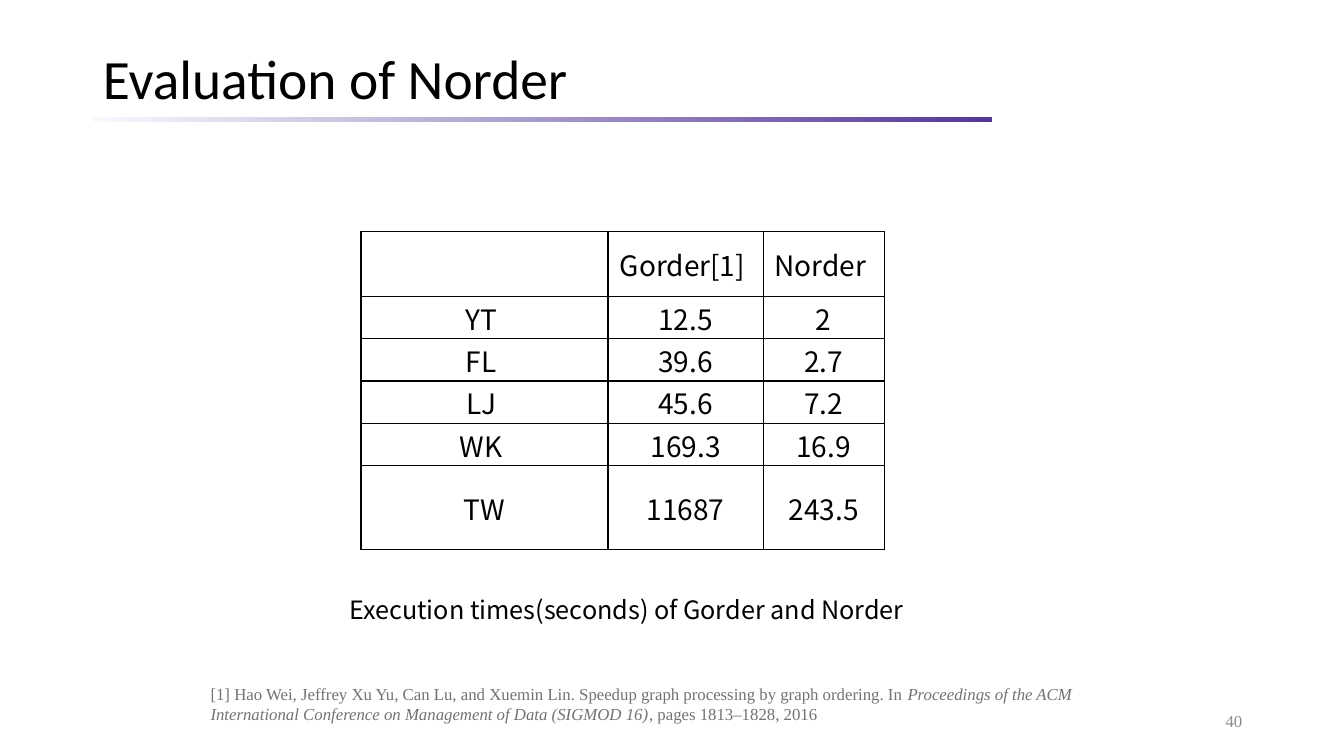
from dataclasses import dataclass

from lxml.etree import SubElement
from pptx import Presentation
from pptx.dml.color import RGBColor
from pptx.enum.shapes import MSO_SHAPE
from pptx.enum.text import MSO_ANCHOR, MSO_AUTO_SIZE, PP_ALIGN
from pptx.oxml.ns import qn
from pptx.util import Inches, Pt


@dataclass(frozen=True)
class Theme:
    black: str = "000000"
    white: str = "FFFFFF"
    gray: str = "767171"
    pale: str = "8C8C8C"
    fade: str = "F7FAFD"
    violet: str = "543795"
    head: str = "Calibri"
    sans: str = "Noto Sans CJK SC"
    serif: str = "Times New Roman"
    title: float = 39.6
    cell: float = 20
    label: float = 18
    note: float = 12


theme = Theme()


def write(frame, *parts, font=theme.sans, size=theme.cell, color=theme.black,
          align=PP_ALIGN.CENTER, anchor=MSO_ANCHOR.MIDDLE):
    """Fill the frame's first paragraph; every second part is italic."""
    frame.word_wrap = True
    frame.vertical_anchor = anchor
    para = frame.paragraphs[0]
    para.alignment = align
    for i, part in enumerate(parts):
        run = para.add_run()
        run.text = part
        run.font.name = font
        run.font.size = Pt(size)
        run.font.italic = i % 2 == 1
        run.font.color.rgb = RGBColor.from_string(color)
    return para


def outline(cell):
    props = cell._tc.get_or_add_tcPr()
    for side in ("lnL", "lnR", "lnT", "lnB"):
        line = SubElement(props, qn(f"a:{side}"), w=str(Pt(1)))
        fill = SubElement(line, qn("a:solidFill"))
        SubElement(fill, qn("a:srgbClr"), val=theme.black)


deck = Presentation()
deck.slide_width, deck.slide_height = Inches(13.33), Inches(7.5)
slide = deck.slides.add_slide(deck.slide_layouts[5])
shapes = slide.shapes

# Title and its rule
title = shapes.title
title.left, title.top = Inches(0.92), Inches(0.43)
title.width, title.height = Inches(11.5), Inches(0.75)
title.text_frame.auto_size = MSO_AUTO_SIZE.NONE
para = write(title.text_frame, "Evaluation of Norder", font=theme.head,
             size=theme.title, align=PP_ALIGN.LEFT)
para.line_spacing = 0.9

rule = shapes.add_shape(MSO_SHAPE.RECTANGLE, Inches(0.92), Inches(1.16),
                        Inches(8.92), Inches(0.05))
rule.shadow.inherit = False
rule.line.fill.background()
rule.fill.gradient()
rule.fill.gradient_angle = 0
for stop, place, color in zip(rule.fill.gradient_stops, (0, 1),
                              (theme.fade, theme.violet)):
    stop.position = place
    stop.color.rgb = RGBColor.from_string(color)

# Execution times
times = [
    ("", "Gorder[1] ", "Norder "),
    ("YT ", "12.5", "2"),
    ("FL ", "39.6", "2.7"),
    ("LJ ", "45.6", "7.2"),
    ("WK ", "169.3", "16.9"),
    ("TW", "11687", "243.5"),
]
widths = (2.45, 1.54, 1.2)
heights = (0.64, 0.42, 0.42, 0.42, 0.42, 0.83)
grid = shapes.add_table(len(times), len(widths), Inches(3.58), Inches(2.3),
                        Inches(sum(widths)), Inches(sum(heights))).table
grid.first_row = grid.horz_banding = False
for col, width in zip(grid.columns, widths):
    col.width = Inches(width)
for row, height, values in zip(grid.rows, heights, times):
    row.height = Inches(height)
    for cell, value in zip(row.cells, values):
        outline(cell)
        cell.fill.solid()
        cell.fill.fore_color.rgb = RGBColor.from_string(theme.white)
        cell.margin_left = cell.margin_right = cell.margin_top = Inches(0.01)
        cell.margin_bottom = 0
        cell.vertical_anchor = MSO_ANCHOR.MIDDLE
        if value:
            write(cell.text_frame, value)

# Caption, reference and page number
label = shapes.add_textbox(Inches(3.18), Inches(5.85), Inches(6.07), Inches(0.4))
write(label.text_frame, "Execution times(seconds) of Gorder and Norder",
      size=theme.label, anchor=MSO_ANCHOR.TOP)

source = shapes.add_textbox(Inches(1.99), Inches(6.73), Inches(9.27), Inches(0.5))
write(source.text_frame,
      "[1] Hao Wei, Jeffrey Xu Yu, Can Lu, and Xuemin Lin. "
      "Speedup graph processing by graph ordering. In ",
      "Proceedings of the ACM International Conference on "
      "Management of Data (SIGMOD 16)",
      ", pages 1813–1828, 2016",
      font=theme.serif, size=theme.note, color=theme.gray,
      align=PP_ALIGN.LEFT, anchor=MSO_ANCHOR.TOP)

page = shapes.add_textbox(Inches(9.42), Inches(6.95), Inches(3), Inches(0.4))
write(page.text_frame, "40", font=theme.serif, size=theme.note,
      color=theme.pale, align=PP_ALIGN.RIGHT)

deck.save("out.pptx")
